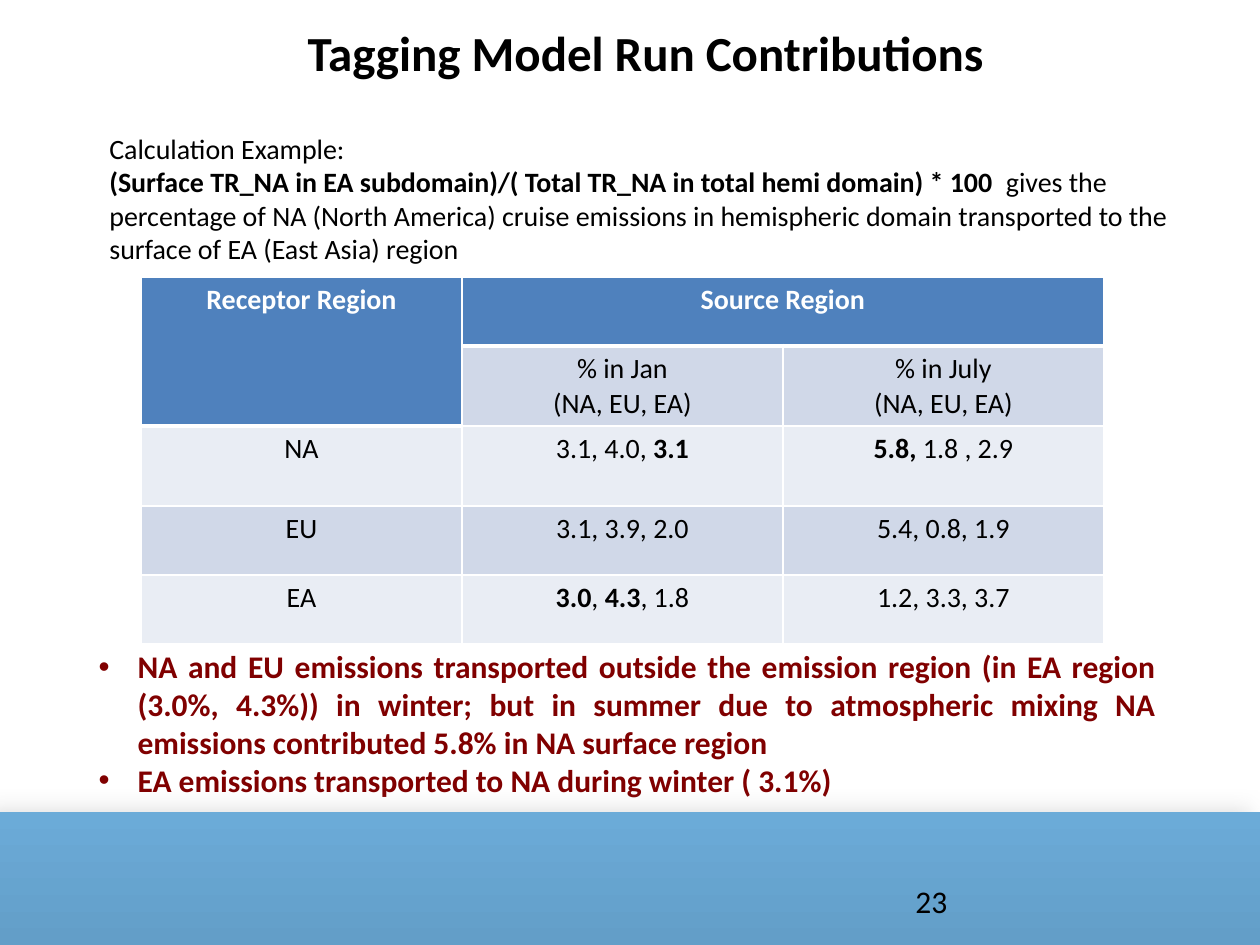
from lxml import etree
from pptx import Presentation
from pptx.dml.color import RGBColor
from pptx.enum.shapes import MSO_SHAPE
from pptx.enum.text import MSO_ANCHOR, MSO_AUTO_SIZE, PP_ALIGN
from pptx.oxml import parse_xml
from pptx.oxml.ns import nsdecls, qn
from pptx.util import Pt

LEFT, CENTER, JUSTIFY = PP_ALIGN.LEFT, PP_ALIGN.CENTER, PP_ALIGN.JUSTIFY
TOP, RECT, NO_FIT = MSO_ANCHOR.TOP, MSO_SHAPE.RECTANGLE, MSO_AUTO_SIZE.NONE
SCALE = 914400 / 126
C = {
    "black": "000000", "white": "FFFFFF", "maroon": "800000",
    "header": "4F81BD", "band": "D0D8E8", "light": "E9EDF4",
    "bar_bottom": "639EC8", "bar_top": "6BABD8", "shadow": "BFBFBF",
}


def px(*lengths):
    return [int(n * SCALE) for n in lengths]


def write(tf, paragraphs, size=16, color="black", bold=False, align=LEFT, bullet=None):
    """Each paragraph is a string or a list of runs; a (text,) run is bold."""
    tf.word_wrap = True
    for i, runs in enumerate(paragraphs):
        p = tf.paragraphs[0] if i == 0 else tf.add_paragraph()
        p.alignment = align
        p.space_before = Pt(0)
        if bullet:
            pPr = p._p.get_or_add_pPr()
            indent = px(39)[0]
            pPr.set("marL", str(indent))
            pPr.set("indent", str(-indent))
            etree.SubElement(pPr, qn("a:buFont")).set("typeface", "Arial")
            etree.SubElement(pPr, qn("a:buChar")).set("char", bullet)
        for run in [runs] if isinstance(runs, str) else runs:
            r = p.add_run()
            r.text = run if isinstance(run, str) else run[0]
            r.font.name = "Calibri"
            r.font.size = Pt(size)
            r.font.bold = bold or isinstance(run, tuple)
            r.font.color.rgb = RGBColor.from_string(C[color])


prs = Presentation()
prs.slide_width, prs.slide_height = px(1260, 945)
s = prs.slides.add_slide(prs.slide_layouts[1])
title, body = s.placeholders[0], s.placeholders[1]

# Footer bar
bar = s.shapes.add_shape(RECT, *px(0, 812, 1260, 133))
bar.line.fill.background()
bar.fill.gradient()
bar.fill.gradient_angle = 90
for stop, name in zip(bar.fill.gradient_stops, ("bar_bottom", "bar_top")):
    stop.color.rgb = RGBColor.from_string(C[name])
bar._element.spPr.append(parse_xml(
    f'<a:effectLst {nsdecls("a")}><a:outerShdw blurRad="{Pt(10.8)}" dist="{Pt(7)}" '
    f'dir="{197 * 60000}" rotWithShape="0"><a:srgbClr val="{C["shadow"]}">'
    '<a:alpha val="43000"/></a:srgbClr></a:outerShdw></a:effectLst>'))

# Title and bullet list
for sp, box in ((title, (170, 16, 951, 72)), (body, (86, 641, 1083, 165))):
    sp.left, sp.top, sp.width, sp.height = px(*box)
    sp.text_frame.auto_size = NO_FIT
    sp.text_frame.vertical_anchor = TOP
write(title.text_frame, ["Tagging Model Run Contributions"], size=28, bold=True, align=CENTER)
write(body.text_frame, [
    "NA and EU emissions transported outside the emission region (in EA region "
    "(3.0%, 4.3%)) in winter; but in summer due to atmospheric mixing NA emissions "
    "contributed 5.8% in NA surface region",
    "EA emissions transported to NA during winter ( 3.1%)",
], size=18, color="maroon", bold=True, align=JUSTIFY, bullet="•")

# Calculation example
example = s.shapes.add_textbox(*px(97, 125, 1100, 152))
write(example.text_frame, [
    "Calculation Example:",
    [("(Surface TR_NA in EA subdomain)/( Total TR_NA in total hemi domain) * 100  ",),
     "gives the percentage of NA (North America) cruise emissions in hemispheric domain "
     "transported to the surface of EA (East Asia) region"],
])

# Slide number
number = s.shapes.add_textbox(*px(903, 876, 294, 50))
write(number.text_frame, ["23"], size=18)

# Contribution table: each cell is a list of paragraphs
rows = [
    [["Receptor Region"], ["Source Region"], []],
    [[], ["% in Jan", "(NA, EU, EA)"], ["% in July", "(NA, EU, EA)"]],
    [["NA"], [["3.1, 4.0, ", ("3.1",)]], [[("5.8, ",), "1.8 , 2.9"]]],
    [["EU"], ["3.1, 3.9, 2.0"], ["5.4, 0.8, 1.9"]],
    [["EA"], [[("3.0",), ", ", ("4.3",), ", 1.8"]], ["1.2, 3.3, 3.7"]],
]
table = s.shapes.add_table(5, 3, *px(141, 277, 963, 367)).table
for col in table.columns:
    col.width = px(321)[0]
for row, height in zip(table.rows, (69, 80, 80, 69, 69)):
    row.height = px(height)[0]
table.cell(0, 0).merge(table.cell(1, 0))
table.cell(0, 1).merge(table.cell(0, 2))

for i, row in enumerate(rows):
    for j, paragraphs in enumerate(row):
        cell = table.cell(i, j)
        last_header = 1 if j == 0 else 0
        header = i <= last_header
        widths = {"L": 1, "R": 1,
                  "T": 3 if i == last_header + 1 else 1,
                  "B": 3 if header else 1}
        tcPr = cell._tc.get_or_add_tcPr()
        for side, width in widths.items():
            tcPr.append(parse_xml(
                f'<a:ln{side} {nsdecls("a")} w="{Pt(width)}"><a:solidFill>'
                f'<a:srgbClr val="{C["white"]}"/></a:solidFill></a:ln{side}>'))
        fill = "header" if header else "band" if i % 2 else "light"
        cell.fill.solid()
        cell.fill.fore_color.rgb = RGBColor.from_string(C[fill])
        write(cell.text_frame, paragraphs, color="white" if header else "black",
              bold=header, align=CENTER)

prs.save("out.pptx")
